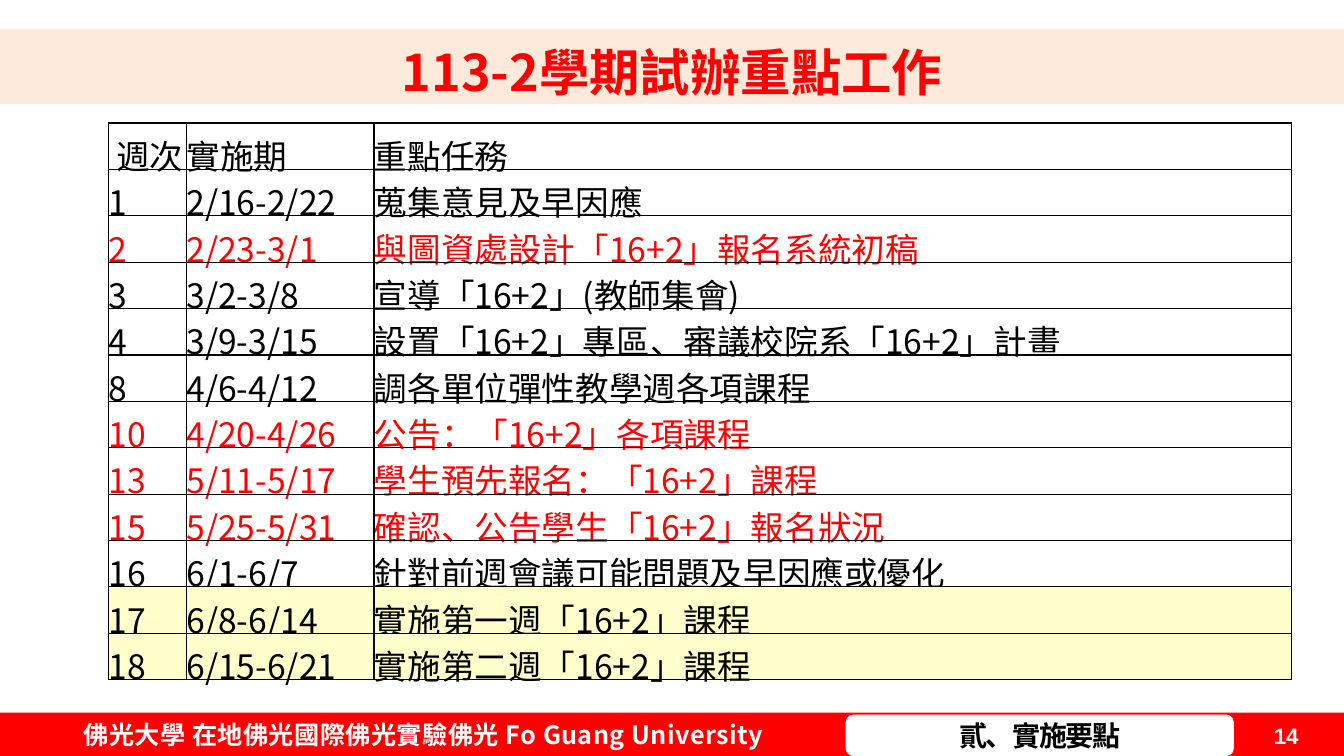
"""Build the slide of key trial tasks for semester 113-2."""
from dataclasses import dataclass

from lxml import etree
from pptx import Presentation
from pptx.dml.color import RGBColor
from pptx.enum.shapes import MSO_SHAPE
from pptx.enum.text import MSO_ANCHOR, MSO_AUTO_SIZE, PP_ALIGN
from pptx.oxml.ns import qn
from pptx.util import Inches, Pt

RECT, ROUND = MSO_SHAPE.RECTANGLE, MSO_SHAPE.ROUNDED_RECTANGLE
TOP, MIDDLE = MSO_ANCHOR.TOP, MSO_ANCHOR.MIDDLE
LEFT, CENTER = PP_ALIGN.LEFT, PP_ALIGN.CENTER
FIXED = MSO_AUTO_SIZE.NONE
CELL = Inches(0.1)
WIDE, HIGH = 133.33, 75
FONT = "Noto Sans CJK SC"
RED, WHITE, BLACK = "FF0000", "FFFFFF", "000000"
PEACH, CREAM = "FDEADA", "FFFFCC"
COLS = (7.7, 18.6, 91)


@dataclass
class Box:
    """Place and size in grid columns and rows."""
    col: float
    row: float
    wide: float
    high: float

    def spans(self) -> tuple:
        """Return left, top, width and height as lengths."""
        return tuple(round(n * CELL) for n in (self.col, self.row, self.wide, self.high))


@dataclass
class Task:
    """One line of the schedule."""
    week: str
    dates: str
    work: str
    ink: str = BLACK
    back: str = ""


TASKS = (
    Task(" 週次", "實施期", "重點任務"),
    Task("1", "2/16-2/22", "蒐集意見及早因應"),
    Task("2", "2/23-3/1", "與圖資處設計「16+2」報名系統初稿", RED),
    Task("3", "3/2-3/8", "宣導「16+2」(教師集會)"),
    Task("4", "3/9-3/15", "設置「16+2」專區、審議校院系「16+2」計畫"),
    Task("8", "4/6-4/12", "調各單位彈性教學週各項課程"),
    Task("10", "4/20-4/26", "公告：「16+2」各項課程", RED),
    Task("13", "5/11-5/17", "學生預先報名：「16+2」課程", RED),
    Task("15", "5/25-5/31", "確認、公告學生「16+2」報名狀況", RED),
    Task("16", "6/1-6/7", "針對前週會議可能問題及早因應或優化"),
    Task("17", "6/8-6/14", "實施第一週「16+2」課程", back=CREAM),
    Task("18", "6/15-6/21", "實施第二週「16+2」課程", back=CREAM),
)


def paint(fill, shade: str) -> None:
    """Give a fill one solid colour."""
    fill.solid()
    fill.fore_color.rgb = RGBColor.from_string(shade)


def write(frame, text: str, size: float, ink: str = BLACK, bold: bool = False,
          align=LEFT, font: str = FONT, lead: float = 1.0, gap: int = 0) -> None:
    """Put formatted text in the first paragraph of a frame."""
    par = frame.paragraphs[0]
    par.alignment, par.line_spacing = align, lead
    run = par.add_run()
    run.text = text
    run.font.size, run.font.bold, run.font.name = Pt(size), bold, font
    paint(run.font.fill, ink)
    props = run.font._element
    if gap:
        props.set("spc", str(gap))
    east = etree.Element(qn("a:ea"), typeface=font)
    props.find(qn("a:latin")).addnext(east)


def block(slide, box: Box, shade: str, kind=RECT):
    """Draw a plain filled shape."""
    shape = slide.shapes.add_shape(kind, *box.spans())
    shape.shadow.inherit = False
    paint(shape.fill, shade)
    shape.line.fill.background()
    return shape


def label(slide, box: Box, text: str, size: float, anchor=TOP, **style) -> None:
    """Add a text box with one formatted line."""
    frame = slide.shapes.add_textbox(*box.spans()).text_frame
    frame.word_wrap, frame.vertical_anchor = True, anchor
    write(frame, text, size, **style)


def edge(cell) -> None:
    """Draw a thin black border on all four sides of a cell."""
    props = cell._tc.get_or_add_tcPr()
    for side in ("lnL", "lnR", "lnT", "lnB"):
        line = etree.SubElement(props, qn(f"a:{side}"), w=str(Pt(1)))
        solid = etree.SubElement(line, qn("a:solidFill"))
        etree.SubElement(solid, qn("a:srgbClr"), val=BLACK)


def chart_weeks(slide, box: Box) -> None:
    """Add the schedule table with rows as high as their text."""
    frame = slide.shapes.add_table(len(TASKS), len(COLS), *box.spans())
    table = frame.table
    table.first_row = table.horz_banding = False
    for col, wide in zip(table.columns, COLS):
        col.width = round(wide * CELL)
    for row, task in zip(table.rows, TASKS):
        row.height = 0
        for cell, text in zip(row.cells, (task.week, task.dates, task.work)):
            cell.margin_left = cell.margin_right = 0
            cell.margin_top = cell.margin_bottom = 0
            edge(cell)
            if task.back:
                paint(cell.fill, task.back)
            else:
                cell.fill.background()
            write(cell.text_frame, text, 24, ink=task.ink, lead=1.15)
    frame.height = box.spans()[3]


def head(slide, box: Box, text: str) -> None:
    """Format the title placeholder as a full-width band."""
    title = slide.shapes.title
    title.left, title.top, title.width, title.height = box.spans()
    paint(title.fill, PEACH)
    frame = title.text_frame
    frame.auto_size, frame.vertical_anchor = FIXED, MIDDLE
    frame.margin_top = frame.margin_bottom = 0
    write(frame, text, 36, ink=RED, bold=True, align=CENTER, lead=1.15)


def foot(slide) -> None:
    """Draw the red footer with school, section and page number."""
    block(slide, Box(0, 70.7, WIDE, 4.3), RED)
    label(slide, Box(121.9, 70.8, 11.4, 4.3), "14", 16, anchor=MIDDLE,
          ink=WHITE, bold=True, align=CENTER, font="Arial")
    label(slide, Box(7.3, 70.9, 75.1, 4),
          "佛光大學 在地佛光國際佛光實驗佛光 Fo Guang University", 18,
          ink=WHITE, bold=True, gap=30)
    pill = block(slide, Box(84, 71, 38.3, 3.9), WHITE, ROUND)
    paint(pill.line.fill, WHITE)
    pill.line.width = Pt(1.5)
    frame = pill.text_frame
    frame.word_wrap, frame.vertical_anchor = False, MIDDLE
    frame.margin_left = frame.margin_right = Inches(0.08)
    frame.margin_top = frame.margin_bottom = Inches(0.04)
    write(frame, "貳、實施要點", 20, bold=True, align=CENTER, gap=-100)


def main() -> None:
    """Build and save the slide."""
    deck = Presentation()
    deck.slide_width, deck.slide_height = round(WIDE * CELL), HIGH * CELL
    slide = deck.slides.add_slide(deck.slide_layouts[5])
    foot(slide)
    chart_weeks(slide, Box(10.8, 12.2, sum(COLS), 50.6))
    head(slide, Box(0, 2.9, WIDE, 7.4), "113-2學期試辦重點工作")
    deck.save("out.pptx")


if __name__ == "__main__":
    main()
